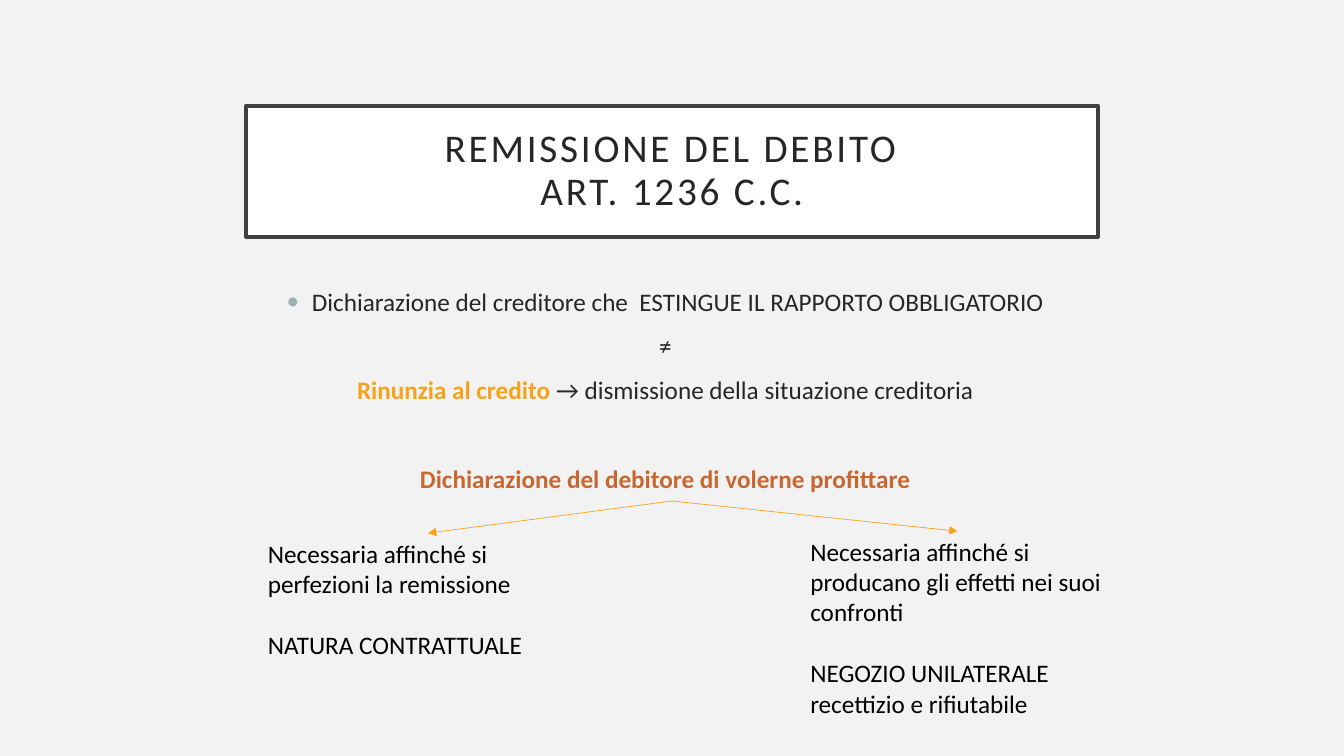
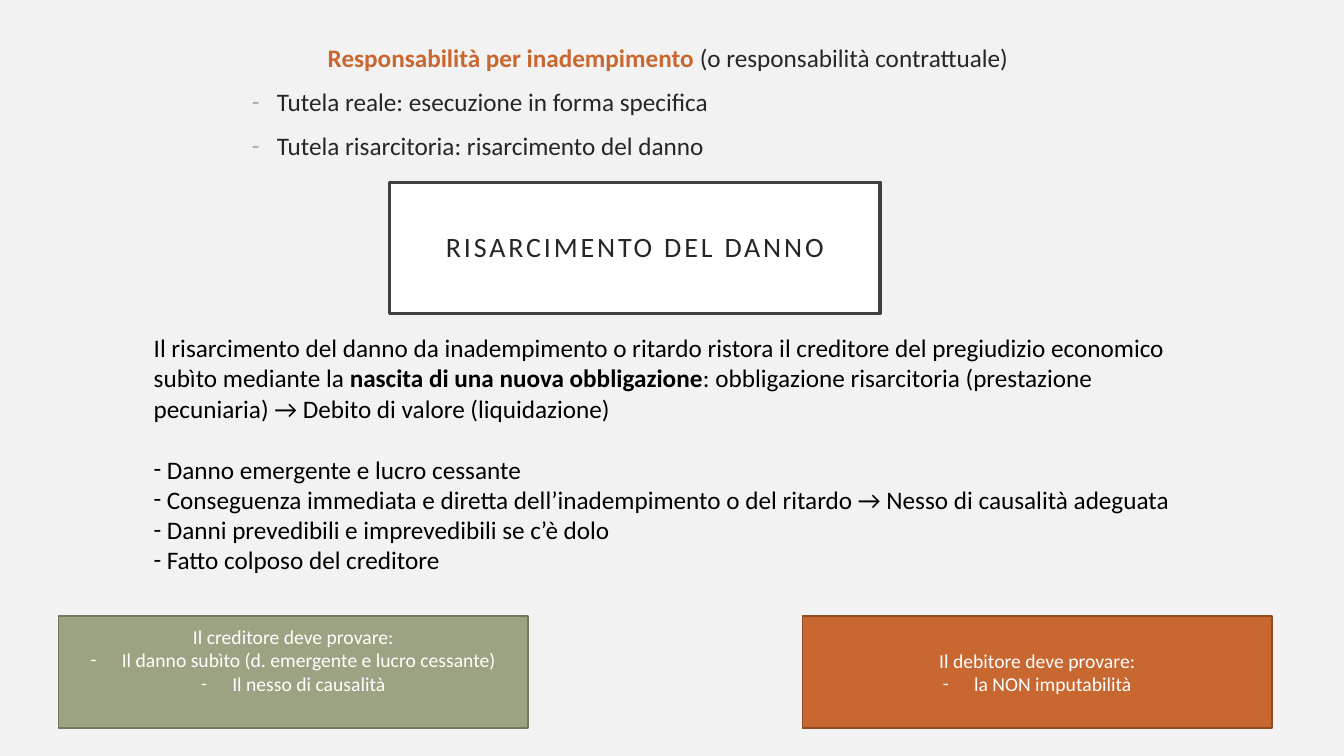
from dataclasses import dataclass
from typing import Optional

from lxml.etree import SubElement
from pptx import Presentation
from pptx.dml.color import RGBColor
from pptx.enum.shapes import MSO_CONNECTOR, MSO_SHAPE
from pptx.enum.text import MSO_ANCHOR, PP_ALIGN
from pptx.oxml.ns import qn
from pptx.util import Inches, Pt

SLIDE_WIDTH = Inches(13.33)
SLIDE_HEIGHT = Inches(7.5)
FONT = "Calibri"
BODY_SIZE = 18
CARD_SIZE = 14
BODY_GAP = 10
BLANK_LINE = 22
CARD_LINE = Pt(17)

PAPER = RGBColor(0xF2, 0xF2, 0xF2)
WHITE = RGBColor(0xFF, 0xFF, 0xFF)
BLACK = RGBColor(0x00, 0x00, 0x00)
INK = RGBColor(0x26, 0x26, 0x26)
FRAME = RGBColor(0x40, 0x40, 0x40)
MIST = RGBColor(0x9B, 0xAF, 0xB5)
AMBER = RGBColor(0xF6, 0xA2, 0x1D)
RUST = RGBColor(0xC9, 0x67, 0x31)
RUST_EDGE = RGBColor(0x95, 0x4C, 0x24)
SAGE = RGBColor(0x9C, 0xA3, 0x83)
SAGE_EDGE = RGBColor(0x73, 0x79, 0x61)


@dataclass
class Span:
    text: str
    color: Optional[RGBColor] = None
    bold: bool = False


@dataclass
class Bullet:
    mark: str
    indent: float
    color: RGBColor


@dataclass
class Line:
    spans: list
    bullet: Optional[Bullet] = None
    before: float = 0
    align: PP_ALIGN = PP_ALIGN.LEFT


DOT = Bullet("•", 0.25, MIST)
DASH = Bullet("-", 0.25, MIST)
CARD_DASH = Bullet("-", 0.31, WHITE)
TIGHT_DASH = Bullet("-", 0.13, BLACK)


def across(percent):
    return round(SLIDE_WIDTH * percent / 100)


def down(percent):
    return round(SLIDE_HEIGHT * percent / 100)


def area(left, top, width, height):
    return across(left), down(top), across(width), down(height)


def line(text, **options):
    return Line([Span(text)], **options)


def centred(*spans, **options):
    return Line(list(spans), align=PP_ALIGN.CENTER, **options)


def add_bullet(paragraph, bullet):
    properties = paragraph._p.get_or_add_pPr()
    properties.set("marL", str(Inches(bullet.indent)))
    properties.set("indent", str(-Inches(bullet.indent)))
    tint = SubElement(properties, qn("a:buClr"))
    SubElement(tint, qn("a:srgbClr")).set("val", str(bullet.color))
    SubElement(properties, qn("a:buFont")).set("typeface", FONT)
    SubElement(properties, qn("a:buChar")).set("char", bullet.mark)


def add_run(paragraph, text, size, color, bold=False):
    run = paragraph.add_run()
    run.text = text
    run.font.name = FONT
    run.font.size = Pt(size)
    run.font.bold = bold
    run.font.color.rgb = color
    return run


def write(frame, lines, size, color):
    frame.word_wrap = True
    for index, entry in enumerate(lines):
        paragraph = frame.add_paragraph() if index else frame.paragraphs[0]
        paragraph.alignment = entry.align
        paragraph.space_before = Pt(entry.before if index else 0)
        if entry.bullet:
            add_bullet(paragraph, entry.bullet)
        for span in entry.spans:
            add_run(paragraph, span.text, size, span.color or color, span.bold)


def add_text(slide, place, lines, color=BLACK):
    box = slide.shapes.add_textbox(*place)
    write(box.text_frame, lines, BODY_SIZE, color)
    return box


def add_panel(slide, place, fill, edge, weight):
    panel = slide.shapes.add_shape(MSO_SHAPE.RECTANGLE, *place)
    panel.shadow.inherit = False
    panel.fill.solid()
    panel.fill.fore_color.rgb = fill
    panel.line.color.rgb = edge
    panel.line.width = Pt(weight)
    panel.text_frame.word_wrap = True
    panel.text_frame.vertical_anchor = MSO_ANCHOR.MIDDLE
    return panel


def add_title(slide, left, top, width, rows, size):
    place = area(left, top, width, 17.33)
    frame = add_panel(slide, place, WHITE, FRAME, 2.5).text_frame
    frame.margin_left = frame.margin_right = Inches(0.2)
    frame.margin_top = frame.margin_bottom = Inches(0.2)
    paragraph = frame.paragraphs[0]
    paragraph.alignment = PP_ALIGN.CENTER
    paragraph.line_spacing = 0.9
    for index, row in enumerate(rows):
        if index:
            paragraph.add_line_break()
        run = add_run(paragraph, row, size, INK)
        run._r.get_or_add_rPr().set("spc", "200")


def add_card(slide, left, fill, edge, heading, proofs, spare=0):
    place = area(left, 81.5, 34.95, 14.8)
    frame = add_panel(slide, place, fill, edge, 1).text_frame
    frame.margin_bottom += spare
    lines = [centred(Span(heading))]
    lines += [centred(Span(proof), bullet=CARD_DASH) for proof in proofs]
    write(frame, lines, CARD_SIZE, WHITE)


def add_branch(slide, fork, outcome):
    branch = slide.shapes.add_connector(MSO_CONNECTOR.STRAIGHT, *fork, *fork)
    branch.end_connect(outcome, 0)
    branch.line.color.rgb = AMBER
    branch.line.width = Pt(0.5)
    SubElement(branch.line._get_or_add_ln(), qn("a:tailEnd")).set("type", "triangle")
    SubElement(branch._element.spPr, qn("a:effectLst"))


def build_remission(slide):
    add_title(slide, 18.3, 14, 63.4, ["REMISSIONE DEL DEBITO", "ART. 1236 C.C."], 28)
    add_text(slide, area(8.3, 37.2, 82.4, 33.3), [
        centred(Span("Dichiarazione del creditore che  ESTINGUE IL RAPPORTO OBBLIGATORIO"),
                bullet=DOT),
        centred(Span("≠"), before=BODY_GAP),
        centred(Span("Rinunzia al credito ", AMBER, True),
                Span("→ dismissione della situazione creditoria"), before=BODY_GAP),
        centred(Span("Dichiarazione del debitore di volerne profittare", RUST, True),
                before=2 * BODY_GAP + BLANK_LINE),
    ], INK)
    contract = add_text(slide, area(19.2, 70.53, 25.3, 17.5), [
        line("Necessaria affinché si perfezioni la remissione"),
        line("NATURA CONTRATTUALE", before=BLANK_LINE),
    ])
    unilateral = add_text(slide, area(59.55, 70.27, 23.4, 25.6), [
        line("Necessaria affinché si producano gli effetti nei suoi confronti"),
        line("NEGOZIO UNILATERALE", before=BLANK_LINE),
        line("recettizio e rifiutabile"),
    ])
    for outcome in (contract, unilateral):
        add_branch(slide, (across(50), down(66.27)), outcome)


def build_damages(slide):
    add_title(slide, 29, 24.13, 36.5, ["RISARCIMENTO DEL DANNO"], 20)
    add_text(slide, area(18, 4.93, 63.4, 19.2), [
        centred(Span("Responsabilità per inadempimento ", RUST, True),
                Span("(o responsabilità contrattuale)")),
        line("Tutela reale: esecuzione in forma specifica", bullet=DASH, before=BODY_GAP),
        line("Tutela risarcitoria: risarcimento del danno", bullet=DASH, before=BODY_GAP),
    ], INK)
    definition = Line([
        Span("Il risarcimento del danno da inadempimento o ritardo ristora il creditore "
             "del pregiudizio economico subìto mediante la "),
        Span("nascita di una nuova obbligazione", bold=True),
        Span(": obbligazione risarcitoria (prestazione pecuniaria) "
             "→ Debito di valore (liquidazione)"),
    ])
    criteria = [
        "Danno emergente e lucro cessante",
        "Conseguenza immediata e diretta dell’inadempimento o del ritardo "
        "→ Nesso di causalità adeguata",
        "Danni prevedibili e imprevedibili se c’è dolo",
        "Fatto colposo del creditore",
    ]
    add_text(slide, area(10.7, 43.3, 78.8, 33.6), [definition] + [
        line(criterion, bullet=TIGHT_DASH, before=0 if index else BLANK_LINE)
        for index, criterion in enumerate(criteria)
    ])
    add_card(slide, 4.35, SAGE, SAGE_EDGE, "Il creditore deve provare:", [
        "Il danno subìto (d. emergente e lucro cessante)",
        "Il nesso di causalità",
    ], CARD_LINE)
    add_card(slide, 59.7, RUST, RUST_EDGE, "Il debitore deve provare:",
             ["la NON imputabilità"])


def main():
    deck = Presentation()
    deck.slide_width = SLIDE_WIDTH
    deck.slide_height = SLIDE_HEIGHT
    backdrop = deck.slide_master.background.fill
    backdrop.solid()
    backdrop.fore_color.rgb = PAPER
    for build in (build_remission, build_damages):
        build(deck.slides.add_slide(deck.slide_layouts[6]))
    deck.save("out.pptx")


if __name__ == "__main__":
    main()
